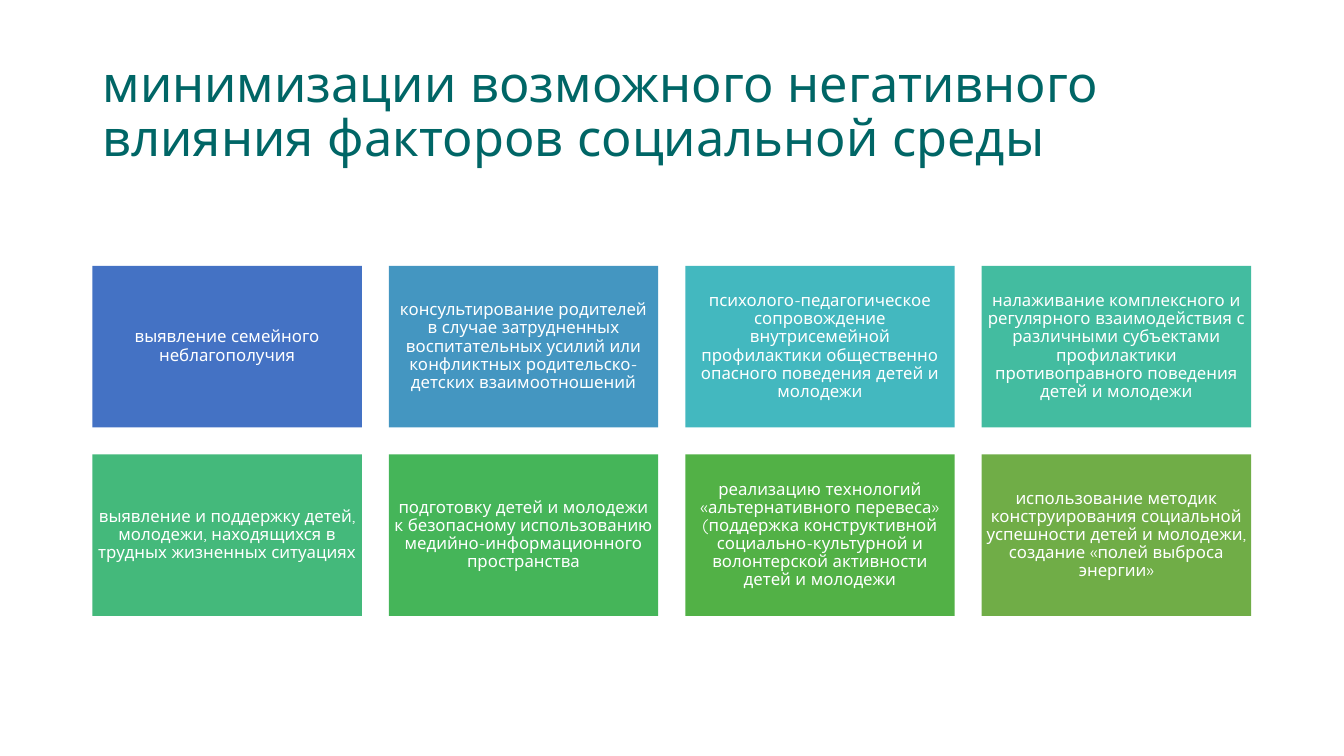
from pptx import Presentation
from pptx.dml.color import RGBColor
from pptx.enum.shapes import MSO_SHAPE
from pptx.enum.text import MSO_ANCHOR, MSO_AUTO_SIZE, PP_ALIGN
from pptx.util import Cm, Pt

RECTANGLE = MSO_SHAPE.RECTANGLE
MIDDLE = MSO_ANCHOR.MIDDLE
NO_AUTOFIT = MSO_AUTO_SIZE.NONE
LEFT, CENTER = PP_ALIGN.LEFT, PP_ALIGN.CENTER
TITLE_ONLY = 5
FONT = "Quicksand"

COLORS = {
    "title": "006666",
    "measure_text": "FFFFFF",
    "blue": "4472C4",
    "steel": "4496C1",
    "cyan": "43B8BF",
    "turquoise": "43BCA0",
    "mint": "44B97B",
    "emerald": "45B559",
    "green": "52B146",
    "olive": "70AD47",
}

HEADING = "минимизации возможного негативного влияния факторов социальной среды"
MEASURES = [
    ("blue", "выявление семейного неблагополучия"),
    ("steel", "консультирование родителей в случае затрудненных воспитательных "
              "усилий или конфликтных родительско-детских взаимоотношений"),
    ("cyan", "психолого-педагогическое сопровождение внутрисемейной профилактики "
             "общественно опасного поведения детей и молодежи"),
    ("turquoise", "налаживание комплексного и регулярного взаимодействия с различными "
                  "субъектами профилактики противоправного поведения детей и молодежи"),
    ("mint", "выявление и поддержку детей, молодежи, находящихся в трудных "
             "жизненных ситуациях"),
    ("emerald", "подготовку детей и молодежи к безопасному использованию "
                "медийно-информационного пространства"),
    ("green", "реализацию технологий «альтернативного перевеса» (поддержка "
              "конструктивной социально-культурной и волонтерской активности "
              "детей и молодежи"),
    ("olive", "использование методик конструирования социальной успешности детей "
              "и молодежи, создание «полей выброса энергии»"),
]

# Grid of measures, in centimetres
COLUMNS = 4
GRID_LEFT, GRID_TOP = 2.33, 6.7
TILE_WIDTH, TILE_HEIGHT = 6.79, 4.07
GAP = 0.68
TILE_INSET = 0.12


def write_text(shape, text, size, color, align):
    frame = shape.text_frame
    frame.word_wrap = True
    frame.auto_size = NO_AUTOFIT
    frame.vertical_anchor = MIDDLE
    paragraph = frame.paragraphs[0]
    paragraph.text = text
    paragraph.alignment = align
    paragraph.line_spacing = 0.9
    paragraph.font.name = FONT
    paragraph.font.size = Pt(size)
    paragraph.font.color.rgb = RGBColor.from_string(COLORS[color])


def add_heading(slide):
    heading = slide.shapes.title
    heading.left, heading.top = Cm(GRID_LEFT), Cm(1.01)
    heading.width, heading.height = Cm(28.88), Cm(3.68)
    write_text(heading, HEADING, size=36, color="title", align=LEFT)


def add_measure(slide, index, fill, text):
    row, column = divmod(index, COLUMNS)
    tile = slide.shapes.add_shape(
        RECTANGLE,
        Cm(GRID_LEFT + column * (TILE_WIDTH + GAP)),
        Cm(GRID_TOP + row * (TILE_HEIGHT + GAP)),
        Cm(TILE_WIDTH),
        Cm(TILE_HEIGHT),
    )
    tile.shadow.inherit = False
    tile.fill.solid()
    tile.fill.fore_color.rgb = RGBColor.from_string(COLORS[fill])
    tile.line.fill.background()
    frame = tile.text_frame
    frame.margin_left = frame.margin_right = Cm(TILE_INSET)
    frame.margin_top = frame.margin_bottom = Cm(TILE_INSET)
    write_text(tile, text, size=12, color="measure_text", align=CENTER)


def main():
    deck = Presentation()
    deck.slide_width, deck.slide_height = Cm(33.87), Cm(19.05)
    slide = deck.slides.add_slide(deck.slide_layouts[TITLE_ONLY])

    # Title
    add_heading(slide)

    # Coloured tiles, row by row
    for index, (fill, text) in enumerate(MEASURES):
        add_measure(slide, index, fill, text)

    deck.save("out.pptx")


if __name__ == "__main__":
    main()
